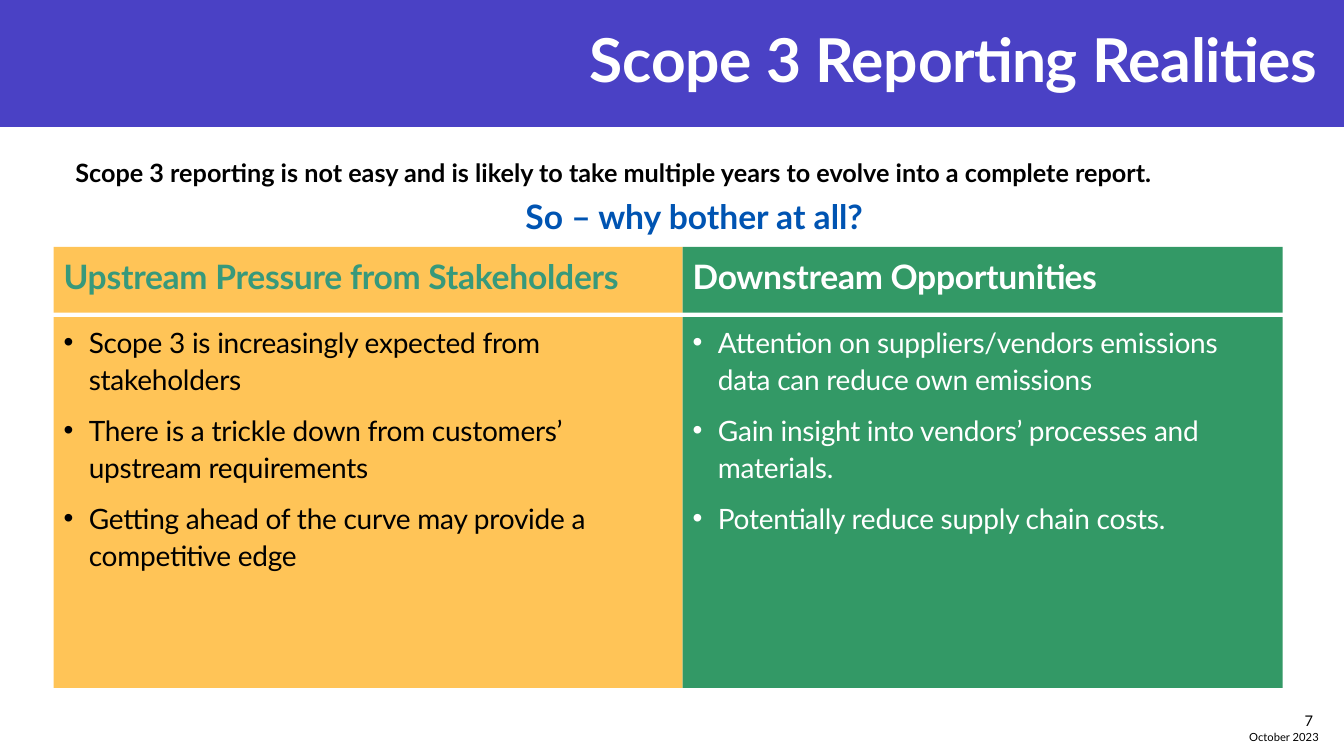
from pptx import Presentation
from pptx.dml.color import RGBColor
from pptx.enum.shapes import MSO_SHAPE
from pptx.enum.text import MSO_ANCHOR, MSO_AUTO_SIZE, PP_ALIGN
from pptx.util import Inches, Pt
from lxml.etree import SubElement
from pptx.oxml.ns import qn

VIOLET = RGBColor(0x4A, 0x41, 0xC5)
AMBER = RGBColor(0xFF, 0xC4, 0x57)
GREEN = RGBColor(0x33, 0x99, 0x66)
TEAL = RGBColor(0x37, 0x99, 0x7B)
BLUE = RGBColor(0x00, 0x54, 0xB2)
WHITE = RGBColor(0xFF, 0xFF, 0xFF)
BLACK = RGBColor(0x00, 0x00, 0x00)

HEADING_TOP, HEADING_HEIGHT = 32.67, 8.67
LIST_TOP, LIST_HEIGHT = 41.93, 49.07
COLUMNS = [
    (1, 3.98, 46.81, AMBER, TEAL, BLACK, "Upstream Pressure from Stakeholders", [
        "Scope 3 is increasingly expected from stakeholders",
        "There is a trickle down from customers’ upstream requirements",
        "Getting ahead of the curve may provide a competitive edge",
    ]),
    (3, 50.79, 44.64, GREEN, WHITE, WHITE, "Downstream Opportunities", [
        "Attention on suppliers/vendors emissions data can reduce own emissions",
        "Gain insight into vendors’ processes and materials.",
        "Potentially reduce supply chain costs.",
    ]),
]


class SlideBuilder:
    font_name = "Lato"
    tracking = "-20"

    def __init__(self, deck, layout_index):
        self.width, self.height = deck.slide_width, deck.slide_height
        self.page = deck.slides.add_slide(deck.slide_layouts[layout_index])

    def area(self, left, top, width, height):
        return (round(self.width * left / 100), round(self.height * top / 100),
                round(self.width * width / 100), round(self.height * height / 100))

    def banner(self, area, color):
        band = self.page.shapes.add_shape(MSO_SHAPE.RECTANGLE, *self.area(*area))
        band.shadow.inherit = False
        band.fill.solid()
        band.fill.fore_color.rgb = color
        band.line.fill.background()
        self.page.shapes._spTree.insert(2, band._element)

    def format(self, para, size, color, bold=False, align=PP_ALIGN.LEFT,
               before=0, spacing=1.0, bullet=False, tight=False):
        properties = para._p.get_or_add_pPr()
        indent = Inches(0.25) if bullet else 0
        properties.set("marL", str(indent))
        properties.set("indent", str(-indent))
        if bullet:
            SubElement(properties, qn("a:buChar")).set("char", "•")
        else:
            SubElement(properties, qn("a:buNone"))
        para.alignment = align
        para.space_before = Pt(before)
        para.line_spacing = spacing
        for span in para.runs:
            span.font.name = self.font_name
            span.font.size = Pt(size)
            span.font.bold = bold
            span.font.color.rgb = color
            if tight:
                span._r.get_or_add_rPr().set("spc", self.tracking)

    def placeholder(self, index, area, lines, size, color, fill=None,
                    anchor=MSO_ANCHOR.TOP, before=10, **style):
        box = self.page.placeholders[index]
        box.left, box.top, box.width, box.height = self.area(*area)
        if fill is not None:
            box.fill.solid()
            box.fill.fore_color.rgb = fill
        frame = box.text_frame
        frame.text = "\n".join(lines)
        frame.auto_size = MSO_AUTO_SIZE.NONE
        frame.vertical_anchor = anchor
        for number, para in enumerate(frame.paragraphs):
            self.format(para, size, color, before=before if number else 0,
                        tight=True, **style)

    def text(self, area, lines, anchor=MSO_ANCHOR.TOP):
        box = self.page.shapes.add_textbox(*self.area(*area))
        frame = box.text_frame
        frame.word_wrap = True
        frame.vertical_anchor = anchor
        frame.text = "\n".join(words for words, _ in lines)
        for para, (_, style) in zip(frame.paragraphs, lines):
            self.format(para, **style)


def main():
    deck = Presentation()
    deck.slide_width, deck.slide_height = Inches(13.33), Inches(7.5)
    slide = SlideBuilder(deck, 4)

    slide.banner((0, 0, 100, 16.8), VIOLET)
    slide.placeholder(0, (1.28, 2, 97.45, 11.33), ["Scope 3 Reporting Realities"],
                      43.2, WHITE, anchor=MSO_ANCHOR.MIDDLE, bold=True,
                      align=PP_ALIGN.RIGHT)

    for index, left, width, fill, heading_color, list_color, heading, points in COLUMNS:
        slide.placeholder(index, (left, HEADING_TOP, width, HEADING_HEIGHT), [heading],
                          24, heading_color, fill, bold=True, spacing=1.1)
        slide.placeholder(index + 1, (left, LIST_TOP, width, LIST_HEIGHT), points,
                          20, list_color, fill, spacing=1.1, bullet=True)

    slide.text((4.88, 20.13, 93.55, 11.87), [
        ("Scope 3 reporting is not easy and is likely to take multiple years "
         "to evolve into a complete report.",
         {"size": 18, "color": BLACK, "bold": True}),
        ("So – why bother at all?",
         {"size": 24, "color": BLUE, "bold": True, "before": 6, "align": PP_ALIGN.CENTER}),
    ])
    slide.text((93.25, 92.67, 5.18, 5.33),
               [("7", {"size": 10.5, "color": BLACK, "align": PP_ALIGN.RIGHT})],
               MSO_ANCHOR.MIDDLE)
    slide.text((92.05, 96, 6.98, 3.2),
               [("October 2023", {"size": 8, "color": BLACK, "align": PP_ALIGN.CENTER})])

    deck.save("out.pptx")


if __name__ == "__main__":
    main()
